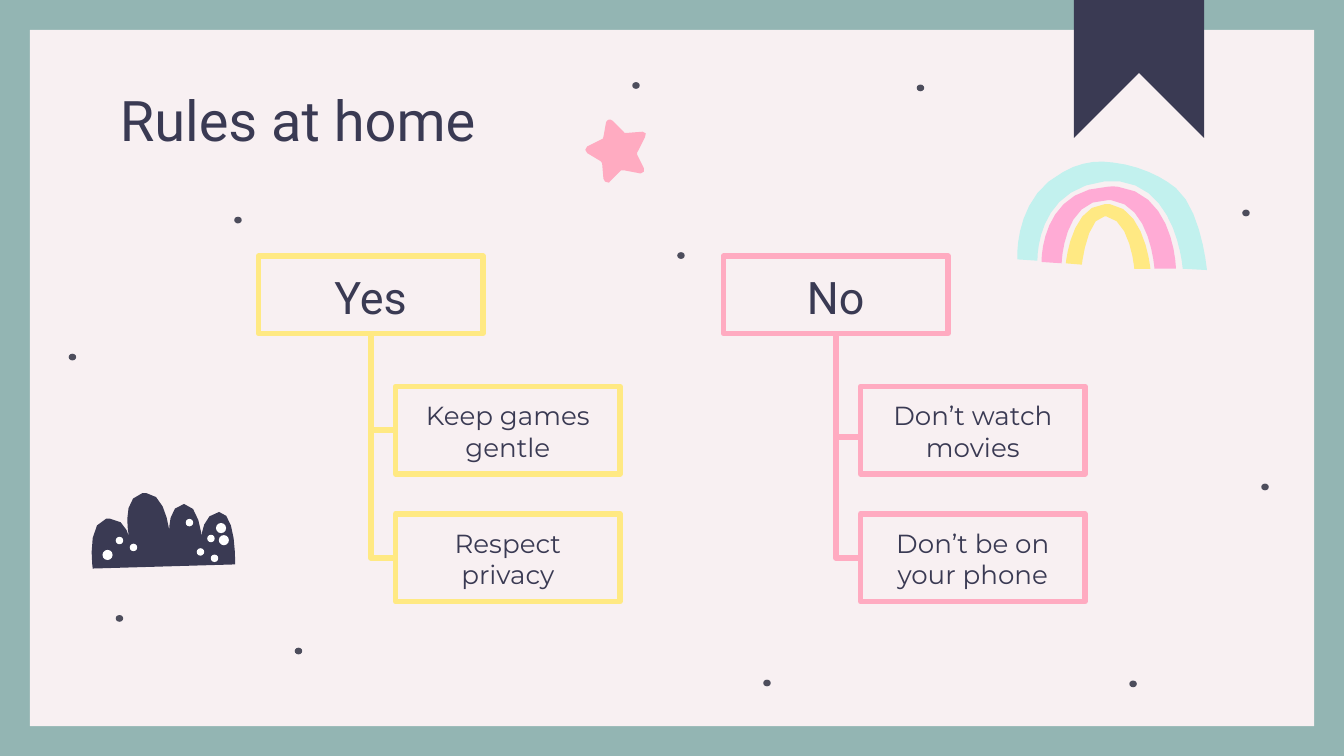
"""Build the "Rules at home" slide with two trees of rules."""
from dataclasses import dataclass
from math import ceil, dist

from lxml import etree
from pptx import Presentation
from pptx.dml.color import RGBColor
from pptx.enum.shapes import MSO_CONNECTOR, MSO_SHAPE
from pptx.enum.text import MSO_ANCHOR, MSO_AUTO_SIZE, PP_ALIGN
from pptx.oxml.ns import qn
from pptx.util import Pt

RECTANGLE, OVAL, CHEVRON = MSO_SHAPE.RECTANGLE, MSO_SHAPE.OVAL, MSO_SHAPE.CHEVRON
ELBOW = MSO_CONNECTOR.ELBOW
TOP, MIDDLE = MSO_ANCHOR.TOP, MSO_ANCHOR.MIDDLE
LEFT, CENTER = PP_ALIGN.LEFT, PP_ALIGN.CENTER
NO_AUTOFIT = MSO_AUTO_SIZE.NONE

SAGE, BLUSH, NAVY, SPECK, WHITE = "93B5B3", "F8F0F2", "3A3A53", "4D4D5C", "FFFFFF"
YELLOW, PINK, ORCHID, MINT = "FFE983", "FFABC1", "FFABD5", "C2F1EE"

TITLE_FONT = {"name": "Roboto", "size": Pt(30)}
HEADING_FONT = {"name": "Roboto", "size": Pt(24)}
RULE_FONT = {"name": "Montserrat", "size": Pt(14)}

BOX_WIDTH, HEADING_HEIGHT, RULE_HEIGHT = 120.2, 41.5, 47
HEADING_TOP, RULES_TOP, RULE_PITCH = 137.2, 207, 68.3
RULE_INDENT, LINE_WIDTH = 73.5, 3
CURVE_STEP = 9


@dataclass
class Tree:
    heading: str
    rules: list[str]
    color: str
    left: float
    first_branch_shift: float


@dataclass
class Outline:
    color: str
    start: tuple[float, float]
    segments: list[tuple[float, ...]]


@dataclass
class Dots:
    color: str
    width: float
    height: float
    centers: list[tuple[float, float]]


TREES = [
    Tree("Yes", ["Keep games gentle", "Respect privacy"], YELLOW, 138.5, 0),
    Tree("No", ["Don’t watch movies", "Don’t be on your phone"], PINK, 387.6, 3.6),
]

SPECKS = Dots(SPECK, 4, 3.6, [
    (159.9, 348.8), (64, 331.3), (38.8, 191.3), (127.5, 117.9), (340.7, 45.8), (493.1, 47.1),
    (364.8, 136.9), (667.5, 114.1), (677.7, 260.9), (607, 366.4), (410.9, 365.9)])
LARGE_SPOTS = Dots(WHITE, 5.4, 5.4, [(118.4, 282.9), (119.9, 289.4), (57.6, 297.3)])
SMALL_SPOTS = Dots(WHITE, 4, 4, [
    (113, 288.5), (101.5, 280), (64, 289.6), (114.9, 299.1), (107.4, 295.7), (71.5, 293.3)])

RAINBOW = [
    Outline(ORCHID, (599, 100.1), [
        (596.9, 100.1, 595.4, 99.4, 593.3, 100.1), (557.3, 101.5, 558, 140.4, 558, 140.4),
        (568.8, 141.1), (568.8, 141.1, 569.5, 106.6, 593.3, 107.3), (595.4, 107.3),
        (616.3, 109.4, 618.5, 144, 618.5, 144), (630, 144),
        (630, 144, 629.3, 103.7, 599, 100.1)]),
    Outline(YELLOW, (594.7, 109.4), [
        (591.8, 109.4), (573.8, 110.2, 571, 141.1, 571, 141.1), (579.6, 141.8),
        (579.6, 141.8, 582.5, 115.9, 591.8, 115.9), (592.6, 115.9),
        (605.5, 117.4, 607.7, 144, 607.7, 144), (616.3, 144),
        (616.3, 144, 613.4, 111.6, 594.7, 109.4)]),
    Outline(MINT, (596.2, 87.1), [
        (587.5, 85.7, 578.2, 87.1, 569.5, 92.2), (542.9, 105.8, 545, 139, 545, 139),
        (555.8, 139.7), (555.8, 139.7, 554.4, 101.5, 591.8, 97.2), (599.8, 97.2),
        (630.7, 100.8, 633.6, 144, 633.6, 144), (646.6, 144.7),
        (646.6, 144.7, 643.7, 112.3, 630, 100.8), (622.1, 94.3, 609.8, 88.6, 596.2, 87.1)]),
]
BUSH = Outline(NAVY, (78.5, 264.2), [
    (76.3, 264.2), (65.5, 266.4, 68.4, 283.7, 69.1, 287.3),
    (68.4, 285.1, 66.2, 277.9, 59, 277.9), (56.9, 277.9),
    (46.1, 280.1, 49.7, 304.6, 49.7, 304.6), (126, 302.4),
    (126, 302.4, 126.7, 274.3, 117.4, 274.3), (108.7, 275, 108, 287.3, 108, 287.3),
    (108, 287.3, 106.6, 270, 98.6, 270), (90, 270.7, 90.7, 284.4, 90.7, 284.4),
    (90.7, 284.4, 88.6, 264.2, 78.5, 264.2)])
STAR = Outline(PINK, (326.2, 64.1), [
    (325.4, 64.1, 325.4, 64.8, 324.7, 65.5), (323.3, 73.4),
    (323.3, 74.2, 322.6, 74.9, 321.8, 74.9), (314.6, 78.5),
    (313.2, 79.2, 313.2, 81.4, 314.6, 82.1), (321.8, 86.4),
    (321.8, 86.4, 322.6, 87.1, 322.6, 87.8), (323.3, 95.8),
    (323.3, 97.2, 324.7, 97.9, 326.2, 97.9), (326.9, 97.2), (332.6, 91.4), (334.8, 91.4),
    (342.7, 92.9), (343.4, 92.9), (344.9, 92.9, 345.6, 91.4, 344.9, 90), (341.3, 82.8),
    (341.3, 82.1, 341.3, 81.4, 342, 80.6), (345.6, 73.4),
    (347, 72, 345.6, 70.6, 344.2, 70.6), (335.5, 71.3),
    (334.8, 71.3, 334.1, 71.3, 334.1, 70.6), (328.3, 64.8),
    (327.6, 64.1, 326.9, 64.1, 326.2, 64.1)])


def apply(target, values: dict) -> None:
    for name, value in values.items():
        setattr(target, name, value)


def paint(color_owner, color: str) -> None:
    color_owner.solid()
    color_owner.fore_color.rgb = RGBColor.from_string(color)


def fill_plain(shape, color: str) -> None:
    shape.shadow.inherit = False
    paint(shape.fill, color)
    shape.line.fill.background()


def add_plain(slide, kind, left: float, top: float, width: float, height: float, color: str):
    shape = slide.shapes.add_shape(kind, Pt(left), Pt(top), Pt(width), Pt(height))
    fill_plain(shape, color)
    return shape


def write(shape, text: str, font: dict, align, anchor) -> None:
    frame = shape.text_frame
    margins = {f"margin_{side}": Pt(7.2) for side in ("left", "top", "right", "bottom")}
    apply(frame, {"text": text, "word_wrap": True, "auto_size": NO_AUTOFIT,
                  "vertical_anchor": anchor, **margins})
    paragraph = frame.paragraphs[0]
    paragraph.alignment = align
    run_font = paragraph.runs[0].font
    apply(run_font, font)
    paint(run_font.fill, NAVY)


def draw_dots(slide, dots: Dots) -> None:
    for x, y in dots.centers:
        add_plain(slide, OVAL, x - dots.width / 2, y - dots.height / 2,
                  dots.width, dots.height, dots.color)


def curve_points(start: tuple, segment: tuple) -> list[tuple[float, float]]:
    if len(segment) == 2:
        return [segment]
    controls = [start, segment[:2], segment[2:4], segment[4:]]
    steps = 1 + ceil(sum(map(dist, controls, controls[1:])) / CURVE_STEP)
    points = []
    for step in range(1, steps + 1):
        t = step / steps
        weights = ((1 - t) ** 3, 3 * t * (1 - t) ** 2, 3 * t * t * (1 - t), t ** 3)
        points.append(tuple(sum(w * c[axis] for w, c in zip(weights, controls))
                            for axis in (0, 1)))
    return points


def draw_outline(slide, outline: Outline) -> None:
    points = [outline.start]
    for segment in outline.segments:
        points += curve_points(points[-1], segment)
    corners = [(Pt(x), Pt(y)) for x, y in points]
    builder = slide.shapes.build_freeform(*corners[0])
    builder.add_line_segments(corners[1:], close=True)
    fill_plain(builder.convert_to_shape(), outline.color)


def draw_box(slide, left: float, top: float, height: float, text: str, color: str,
             font: dict) -> None:
    box = slide.shapes.add_shape(RECTANGLE, Pt(left), Pt(top), Pt(BOX_WIDTH), Pt(height))
    box.shadow.inherit = False
    box.fill.background()
    paint(box.line.fill, color)
    box.line.width = Pt(LINE_WIDTH)
    write(box, text, font, CENTER, TOP)


def draw_branch(slide, x: float, top: float, reach: float, drop: float, color: str) -> None:
    middle_x, middle_y = x + reach / 2, top + drop / 2
    branch = slide.shapes.add_connector(
        ELBOW, Pt(middle_x + drop / 2), Pt(middle_y - reach / 2),
        Pt(middle_x - drop / 2), Pt(middle_y + reach / 2))
    paint(branch.line.fill, color)
    branch.line.width = Pt(LINE_WIDTH)
    properties = branch.element.spPr
    properties.find(qn("a:xfrm")).set("rot", "16200000")
    properties.find(qn("a:prstGeom")).set("prst", "bentConnector2")
    etree.SubElement(properties, qn("a:effectLst"))


def draw_tree(slide, tree: Tree) -> None:
    draw_box(slide, tree.left, HEADING_TOP, HEADING_HEIGHT, tree.heading, tree.color, HEADING_FONT)
    trunk, base = tree.left + BOX_WIDTH / 2, HEADING_TOP + HEADING_HEIGHT
    for index, rule in enumerate(tree.rules):
        top = RULES_TOP + index * RULE_PITCH
        draw_box(slide, tree.left + RULE_INDENT, top, RULE_HEIGHT, rule, tree.color, RULE_FONT)
        shift = 0 if index else tree.first_branch_shift
        draw_branch(slide, trunk, base + shift, RULE_INDENT - BOX_WIDTH / 2,
                    top + RULE_HEIGHT / 2 - base, tree.color)


def main() -> None:
    deck = Presentation()
    apply(deck, {"slide_width": Pt(720), "slide_height": Pt(405)})
    slide = deck.slides.add_slide(deck.slide_layouts[5])
    paint(slide.background.fill, SAGE)
    add_plain(slide, RECTANGLE, 16, 16, 688, 373, BLUSH)
    draw_dots(slide, SPECKS)
    ribbon = add_plain(slide, CHEVRON, 548.7, -22.5, 123, 69.8, NAVY)
    ribbon.rotation = 270
    title = slide.shapes.title
    apply(title, {"left": Pt(57), "top": Pt(42.5), "width": Pt(355.7), "height": Pt(42.5)})
    write(title, "Rules at home", TITLE_FONT, LEFT, MIDDLE)
    title.element.getparent().append(title.element)
    for tree in TREES:
        draw_tree(slide, tree)
    for outline in (*RAINBOW, BUSH, STAR):
        draw_outline(slide, outline)
    for spots in (LARGE_SPOTS, SMALL_SPOTS):
        draw_dots(slide, spots)
    deck.save("out.pptx")


if __name__ == "__main__":
    main()
